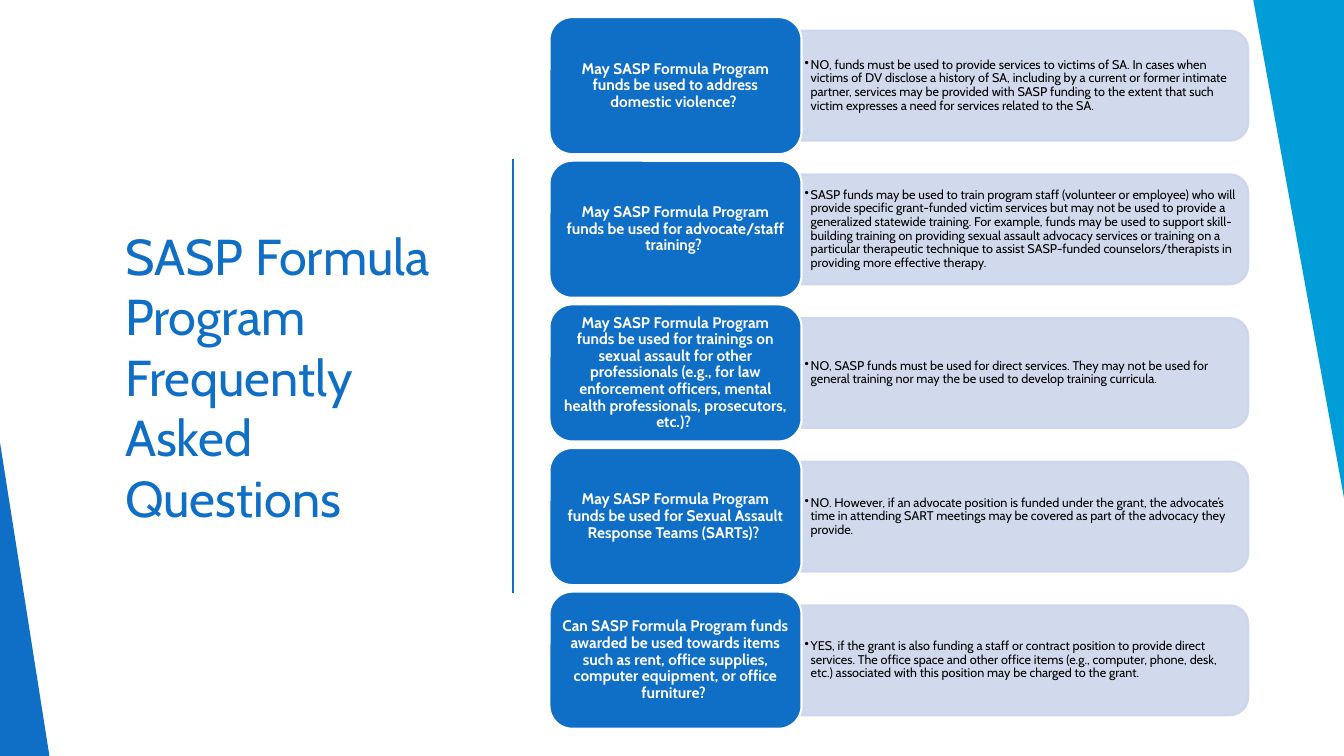
from lxml import etree
from pptx import Presentation
from pptx.dml.color import RGBColor
from pptx.enum.shapes import MSO_CONNECTOR, MSO_SHAPE
from pptx.enum.text import MSO_ANCHOR, MSO_AUTO_SIZE, PP_ALIGN
from pptx.oxml.ns import qn
from pptx.util import Inches, Pt

TITLE = "SASP Formula Program \vFrequently Asked Questions"
FAQS = [
    ("May SASP Formula Program funds be used to address domestic violence? ",
     "NO, funds must be used to provide services to victims of SA. In cases when victims of DV "
     "disclose a history of SA, including by a current or former intimate partner, services may be "
     "provided with SASP funding to the extent that such victim expresses a need for services "
     "related to the SA."),
    ("May SASP Formula Program funds be used for advocate/staff training? ",
     "SASP funds may be used to train program staff (volunteer or employee) who will provide "
     "specific grant-funded victim services but may not be used to provide a generalized statewide "
     "training. For example, funds may be used to support skill-building training on providing "
     "sexual assault advocacy services or training on a particular therapeutic technique to assist "
     "SASP-funded counselors/therapists in providing more effective therapy."),
    ("May SASP Formula Program funds be used for trainings on sexual assault for other "
     "professionals (e.g., for law enforcement officers, mental health professionals, "
     "prosecutors, etc.)? ",
     "NO, SASP funds must be used for direct services. They may not be used for general training "
     "nor may the be used to develop training curricula."),
    ("May SASP Formula Program funds be used for Sexual Assault Response Teams (SARTs)? ",
     "NO. However, if an advocate position is funded under the grant, the advocate’s time in "
     "attending SART meetings may be covered as part of the advocacy they provide."),
    ("Can SASP Formula Program funds awarded be used towards items such as rent, office supplies, "
     "computer equipment, or office furniture? ",
     "YES, if the grant is also funding a staff or contract position to provide direct services. "
     "The office space and other office items (e.g., computer, phone, desk, etc.) associated with "
     "this position may be charged to the grant."),
]

FONT = "Cabin"
BLUE = RGBColor(0x0F, 0x6F, 0xC6)
CYAN = RGBColor(0x00, 0x9D, 0xD9)
PALE = RGBColor(0xCC, 0xD5, 0xEA)
WHITE = RGBColor(0xFF, 0xFF, 0xFF)
BLACK = RGBColor(0x00, 0x00, 0x00)
TRIANGLE = MSO_SHAPE.ISOSCELES_TRIANGLE
ROUNDED = MSO_SHAPE.ROUNDED_RECTANGLE
ROUNDED_TOP = MSO_SHAPE.ROUND_2_SAME_RECTANGLE
STRAIGHT = MSO_CONNECTOR.STRAIGHT
MIDDLE = MSO_ANCHOR.MIDDLE
LEFT, CENTER = PP_ALIGN.LEFT, PP_ALIGN.CENTER
NO_FIT = MSO_AUTO_SIZE.NONE

FIRST_TOP, PITCH = 0.17, 1.425
QUESTION_X, QUESTION_W, QUESTION_H = 5.45, 2.5, 1.36
ANSWER_X, ANSWER_W, ANSWER_H = 7.94, 4.44, 1.09
ANSWER_TEXT_W, ANSWER_TEXT_H = 4.39, 0.98


def add_shape(slide, kind, x, y, w, h, fill, line=None):
    sp = slide.shapes.add_shape(kind, Inches(x), Inches(y), Inches(w), Inches(h))
    sp.shadow.inherit = False
    sp.fill.solid()
    sp.fill.fore_color.rgb = fill
    if line is None:
        sp.line.fill.background()
    else:
        sp.line.color.rgb = line
        sp.line.width = Pt(1.5)
    return sp


def add_corner(slide, x, y, w, h, fill, rotation=0):
    sp = add_shape(slide, TRIANGLE, x, y, w, h, fill)
    sp.adjustments[0] = 0
    sp.rotation = rotation


def set_alpha(sp, percent):
    for color in sp._element.spPr.iter(qn("a:srgbClr")):
        etree.SubElement(color, qn("a:alpha"), val=str(percent * 1000))


def set_text(sp, text, size, color, align, side, bold=False):
    tf = sp.text_frame
    tf.word_wrap = True
    tf.auto_size = NO_FIT
    tf.vertical_anchor = MIDDLE
    tf.margin_left = tf.margin_right = Inches(side)
    tf.margin_top = tf.margin_bottom = Inches(0.02)
    p = tf.paragraphs[0]
    p.text = text
    p.alignment = align
    p.line_spacing = 0.9
    p.font.name = FONT
    p.font.size = Pt(size)
    p.font.bold = bold
    p.font.color.rgb = color
    return p


def set_bullet(p):
    pPr = p._p.get_or_add_pPr()
    pPr.set("marL", str(Inches(0.06)))
    pPr.set("indent", str(-Inches(0.06)))
    bullet = etree.Element(qn("a:buChar"), char="•")
    pPr.find(qn("a:lnSpc")).addnext(bullet)


def add_title(slide):
    title = slide.shapes.title
    title.left, title.top = Inches(1.14), Inches(1.29)
    title.width, title.height = Inches(3.61), Inches(4.88)
    tf = title.text_frame
    tf.text = TITLE
    tf.word_wrap = True
    tf.auto_size = NO_FIT
    tf.vertical_anchor = MIDDLE
    p = tf.paragraphs[0]
    p.alignment = LEFT
    p.font.name = FONT
    p.font.size = Pt(36)
    p.font.color.rgb = BLUE


def add_divider(slide):
    divider = slide.shapes.add_connector(
        STRAIGHT, Inches(5.09), Inches(1.58), Inches(5.09), Inches(5.88))
    divider.line.color.rgb = BLUE
    divider.line.width = Pt(1)
    etree.SubElement(divider._element.spPr, qn("a:effectLst"))


def add_faq(slide, top, question, answer):
    middle = top + QUESTION_H / 2
    panel = add_shape(slide, ROUNDED_TOP, ANSWER_X + (ANSWER_W - ANSWER_H) / 2,
                      middle - ANSWER_W / 2, ANSWER_H, ANSWER_W, PALE, PALE)
    panel.rotation = 90
    set_alpha(panel, 90)
    box = slide.shapes.add_textbox(Inches(ANSWER_X), Inches(middle - ANSWER_TEXT_H / 2),
                                   Inches(ANSWER_TEXT_W), Inches(ANSWER_TEXT_H))
    set_bullet(set_text(box, answer, 9, BLACK, LEFT, 0.04))
    card = add_shape(slide, ROUNDED, QUESTION_X, top, QUESTION_W, QUESTION_H, BLUE, WHITE)
    set_text(card, question, 11, WHITE, CENTER, 0.05, bold=True)


def main():
    prs = Presentation()
    prs.slide_width, prs.slide_height = Inches(13.33), Inches(7.5)
    slide = prs.slides.add_slide(prs.slide_layouts[5])
    add_title(slide)
    add_corner(slide, 0, 4.39, 0.49, 3.11, BLUE)
    add_divider(slide)
    add_corner(slide, 12.43, 0, 0.92, 5.05, CYAN, rotation=180)
    for i, (question, answer) in enumerate(FAQS):
        add_faq(slide, FIRST_TOP + i * PITCH, question, answer)
    prs.save("out.pptx")


if __name__ == "__main__":
    main()
